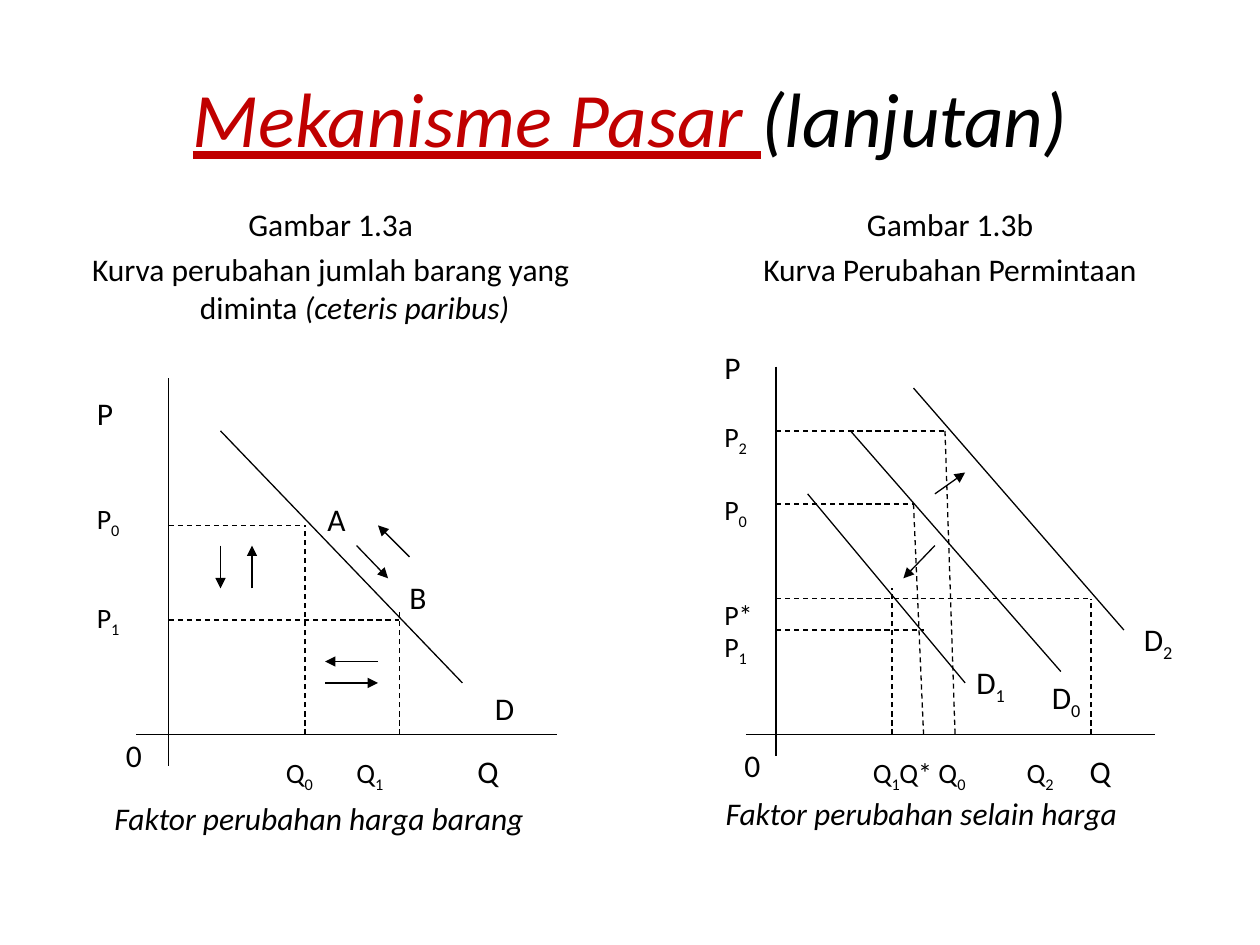
from pptx import Presentation
from pptx.dml.color import RGBColor
from pptx.enum.dml import MSO_LINE
from pptx.enum.shapes import MSO_CONNECTOR
from pptx.enum.text import MSO_ANCHOR, PP_ALIGN
from pptx.oxml.ns import qn
from pptx.util import Inches, Pt
from lxml.etree import SubElement

BLACK = RGBColor(0, 0, 0)
RED = RGBColor(0xC0, 0, 0)
FONT = "Calibri"


def add_run(paragraph, text, size=18, color=BLACK, italic=False, subscript=False):
    run = paragraph.add_run()
    run.text = text
    run.font.name = FONT
    run.font.size = Pt(size)
    run.font.color.rgb = color
    run.font.italic = italic
    if subscript:
        run._r.get_or_add_rPr().set("baseline", "-25000")
    return run


def add_frame(slide, left, top, width, height, wrap=True):
    box = slide.shapes.add_textbox(
        Inches(left), Inches(top), Inches(width), Inches(height))
    box.text_frame.word_wrap = wrap
    return box.text_frame


def add_title(slide, left, top, width, height):
    frame = add_frame(slide, left, top, width, height)
    frame.vertical_anchor = MSO_ANCHOR.MIDDLE
    heading = frame.paragraphs[0]
    heading.alignment = PP_ALIGN.CENTER
    topic = add_run(heading, "Mekanisme Pasar ", 44, RED, italic=True)
    topic.font.underline = True
    add_run(heading, "(lanjutan)", 44, italic=True)


def add_caption(slide, left, top, width, height, lines):
    frame = add_frame(slide, left, top, width, height)
    for index, parts in enumerate(lines):
        line = frame.add_paragraph() if index else frame.paragraphs[0]
        line.alignment = PP_ALIGN.CENTER
        line.space_before = Pt(4)
        properties = line._p.get_or_add_pPr()
        properties.set("marL", str(Inches(0.38)))
        properties.set("indent", str(Inches(-0.38)))
        for text, italic in parts:
            add_run(line, text, italic=italic)


def add_line(slide, origin, ends, dashed=False, arrow=False):
    x, y = origin
    x1, y1, x2, y2 = ends
    line = slide.shapes.add_connector(
        MSO_CONNECTOR.STRAIGHT, Inches(x + x1), Inches(y - y1),
        Inches(x + x2), Inches(y - y2))
    line.line.color.rgb = BLACK
    line.line.width = Pt(0.75)
    if dashed:
        line.line.dash_style = MSO_LINE.DASH
    if arrow:
        SubElement(line._element.spPr.get_or_add_ln(), qn("a:tailEnd"), type="triangle")
    SubElement(line._element.spPr, qn("a:effectLst"))


def add_label(slide, origin, text, subscript, x, y, size=18):
    frame = add_frame(slide, origin[0] + x, origin[1] - y, 0.6, 0.42)
    name = frame.paragraphs[0]
    add_run(name, text, size)
    if subscript:
        add_run(name, subscript, size, subscript=True)


def add_graph(slide, origin, solid, guides, arrows, letters, ticks):
    for ends in solid:
        add_line(slide, origin, ends)
    for ends in guides:
        add_line(slide, origin, ends, dashed=True)
    for ends in arrows:
        add_line(slide, origin, ends, arrow=True)
    for letter in letters:
        add_label(slide, origin, *letter)
    for tick in ticks:
        add_label(slide, origin, *tick, size=16)


def add_footnote(slide, left, top, width, height, text):
    frame = add_frame(slide, left, top, width, height, wrap=False)
    add_run(frame.paragraphs[0], text, italic=True)


def add_quantity_panel(slide, left, top):
    add_caption(slide, left, top, 4.75, 5.21, [
        [("Gambar 1.3a", False)],
        [("Kurva perubahan jumlah barang yang diminta ", False),
         ("(ceteris paribus)", True)]])
    add_graph(
        slide, (left + 1.09, top + 4.25),
        solid=[(0, 2.83, 0, -0.25), (-0.26, 0, 3.08, 0), (0.41, 2.41, 2.33, 0.41)],
        guides=[(0, 1.66, 1.08, 1.66), (0, 0.91, 1.83, 0.91),
                (1.08, 0, 1.08, 1.66), (1.83, 0, 1.83, 0.99)],
        arrows=[(1.49, 1.5, 1.74, 1.24), (0.41, 1.5, 0.41, 1.16),
                (0.66, 1.16, 0.66, 1.5), (1.24, 0.41, 1.66, 0.41),
                (1.66, 0.58, 1.24, 0.58), (1.91, 1.41, 1.66, 1.66)],
        letters=[("P", "", -0.67, 2.75), ("Q", "", 2.35, -0.09),
                 ("0", "", -0.44, 0.04), ("D", "", 2.49, 0.41),
                 ("A", "", 1.16, 1.91), ("B", "", 1.81, 1.29)],
        ticks=[("P", "0", -0.67, 1.9), ("P", "1", -0.67, 1.11),
               ("Q", "0", 0.83, -0.12), ("Q", "1", 1.39, -0.12)])
    add_footnote(slide, left + 0.56, top + 4.71, 3.94, 0.42,
                 "Faktor perubahan harga barang")


def add_demand_panel(slide, left, top):
    add_caption(slide, left, top, 4.42, 5.29, [
        [("Gambar 1.3b", False)],
        [("Kurva Perubahan Permintaan", False)]])
    add_graph(
        slide, (left + 0.83, top + 4.25),
        solid=[(0, 2.92, 0, -0.17), (-0.24, 0, 3.01, 0), (0.59, 2.41, 2.26, 0.5),
               (1.09, 2.75, 2.76, 0.83), (0.25, 1.91, 1.5, 0.41)],
        guides=[(0, 1.83, 1.09, 1.83), (0, 2.41, 1.34, 2.41),
                (0, 1.08, 2.5, 1.08), (0, 0.83, 1.17, 0.83),
                (1.34, 2.41, 1.42, 0), (1.09, 1.83, 1.17, 0),
                (2.5, 0, 2.5, 1.08), (0.92, 0, 0.92, 1.16)],
        arrows=[(1.26, 1.91, 1.5, 2.08), (1.26, 1.5, 1.01, 1.24)],
        letters=[("P", "", -0.51, 3.12), ("Q", "", 2.39, -0.09),
                 ("0", "", -0.35, -0.04), ("D", "2", 2.82, 0.96),
                 ("D", "0", 2.09, 0.5), ("D", "1", 1.49, 0.62)],
        ticks=[("P", "2", -0.51, 2.55), ("P", "0", -0.51, 1.97),
               ("P*", "", -0.51, 1.14), ("P", "1", -0.51, 0.88),
               ("Q", "1", 0.67, -0.12), ("Q*", "", 0.88, -0.12),
               ("Q", "0", 1.19, -0.12), ("Q", "2", 1.89, -0.12)])
    add_footnote(slide, left + 0.33, top + 4.67, 3.81, 0.42,
                 "Faktor perubahan selain harga")


def main():
    deck = Presentation()
    deck.slide_width = Inches(10)
    deck.slide_height = Inches(7.5)
    slide = deck.slides.add_slide(deck.slide_layouts[6])
    add_title(slide, 0.5, 0.3, 9, 1.25)
    add_quantity_panel(slide, 0.25, 1.58)
    add_demand_panel(slide, 5.33, 1.58)
    deck.save("out.pptx")


if __name__ == "__main__":
    main()
